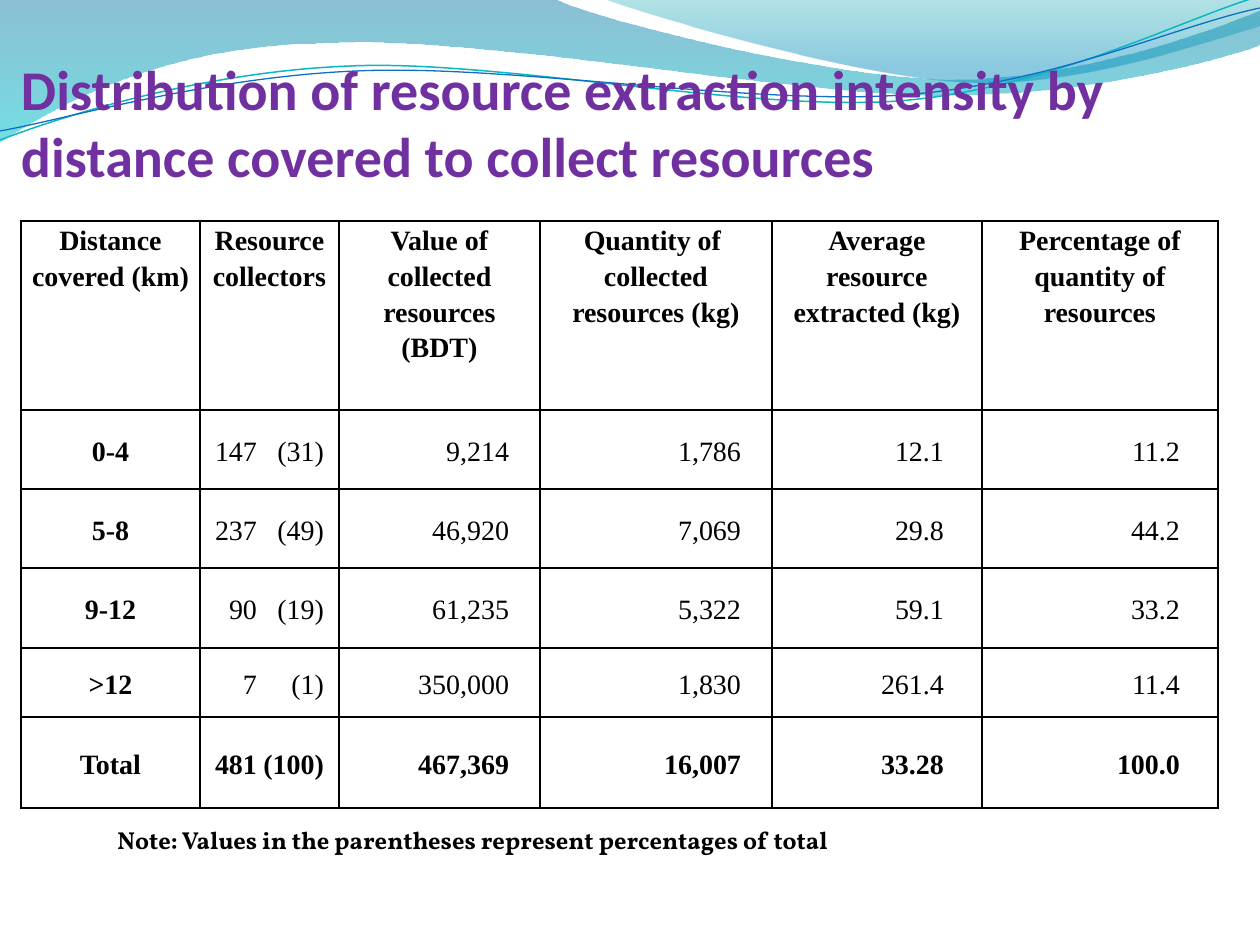
import lxml.etree
import pptx
import pptx.dml.color
import pptx.enum.text
import pptx.oxml.ns
import pptx.util

PX = 914400 / 126  # EMU per px
COLORS = {
    "title": "7030A0", "text": "000000", "border": "000000",
    "deep blue": "0074A1", "cyan": "00C6CF", "teal": "00A1A9", "blue": "008BBF",
    "teal line": "0AB8BF", "blue line": "0F6FC6",
}
FORMATS = {
    "title": {"name": "Calibri", "size": pptx.util.Pt(32), "bold": True},
    "strong": {"name": "Times New Roman", "size": pptx.util.Pt(16), "bold": True},
    "plain": {"name": "Times New Roman", "size": pptx.util.Pt(16), "bold": False},
    "note": {"name": "Vollkorn", "size": pptx.util.Pt(14), "bold": True},
}
ALIGN = pptx.enum.text.PP_ALIGN
ANCHOR = pptx.enum.text.MSO_ANCHOR
qn = pptx.oxml.ns.qn


def add_text(paragraph, text, style, color):
    run = paragraph.add_run()
    run.text = text
    for attribute, value in FORMATS[style].items():
        setattr(run.font, attribute, value)
    run.font.color.rgb = pptx.dml.color.RGBColor.from_string(COLORS[color])


def add_curve(shapes, segments, closed):
    """Two numbers make a straight segment, six a cubic Bezier curve."""
    ends = [(round(segment[-2] * PX), round(segment[-1] * PX)) for segment in segments]
    builder = shapes.build_freeform(*ends[0], scale=1.0)
    builder.add_line_segments(ends[1:], close=closed)
    shape = builder.convert_to_shape()
    shape.shadow.inherit = False
    left, top = (min(values) for values in zip(*ends))
    straight_parts = list(shape._element.iter(qn("a:lnTo")))
    for straight, segment in zip(straight_parts, segments[1:]):
        if len(segment) == 6:
            straight.addprevious(curve := lxml.etree.Element(qn("a:cubicBezTo")))
            for x, y in zip(segment[::2], segment[1::2]):
                lxml.etree.SubElement(curve, qn("a:pt"), x=str(round(x * PX) - left),
                                      y=str(round(y * PX) - top))
            straight.getparent().remove(straight)
    return shape


presentation = pptx.Presentation()
presentation.slide_width = round(1260 * PX)
presentation.slide_height = round(945 * PX)
slide = presentation.slides.add_slide(presentation.slide_layouts[5])
shapes = slide.shapes

# Wave bands: outline, then gradient stops (position, color, opacity)
BANDS = [
    ([(0, 0), (554, -1), (600, 21, 837, 79, 955, 79), (1075, 79, 1207, 33, 1260, 11),
      (1261, 45), (1235, 55, 1096, 96, 940, 95), (784, 95, 481, 35, 324, 43),
      (163, 45, 58, 105, -1, 142)],
     [(0, "deep blue", 45), (1, "cyan", 55)]),
    ([(604, -1), (641, 14, 859, 78, 969, 82), (1079, 87, 1211, 40, 1260, 26), (1260, 0)],
     [(0, "teal", 30), (0.8, "blue", 45)]),
]
for outline, stops in BANDS:
    band = add_curve(shapes, outline, True)
    band.line.fill.background()
    band.fill.gradient()
    band.fill.gradient_angle = 270
    for gradient_stop, (position, color, opacity) in zip(band.fill.gradient_stops, stops):
        gradient_stop.position = position
        gradient_stop.color.rgb = pptx.dml.color.RGBColor.from_string(COLORS[color])
    for element, (position, color, opacity) in zip(
            band._element.spPr.iter(qn("a:srgbClr")), stops):
        lxml.etree.SubElement(element, qn("a:alpha"), val=str(opacity * 1000))

# Wave lines
LINES = [
    ([(0, 140), (60, 117, 199, 72, 349, 66), (496, 59, 747, 112, 898, 101),
      (1050, 89, 1182, 19, 1257, -3)], "teal line", 0.85),
    ([(0, 131), (59, 121, 207, 77, 357, 71), (508, 64, 752, 106, 903, 95),
      (1053, 84, 1175, 26, 1260, 8)], "blue line", 0.75),
]
for outline, color, width in LINES:
    wave = add_curve(shapes, outline, False)
    wave.fill.background()
    wave.line.color.rgb = pptx.dml.color.RGBColor.from_string(COLORS[color])
    wave.line.width = pptx.util.Pt(width)

# Title, in front of the waves
title = shapes.title
shapes._spTree.append(title._element)
title.left, title.top, title.width, title.height = (
    round(length * PX) for length in (21, 31, 1207, 158))
title_format = {
    "margin_left": 0, "margin_top": round(6 * PX), "margin_right": 0, "margin_bottom": 0,
    "vertical_anchor": ANCHOR.BOTTOM, "word_wrap": True,
    "auto_size": pptx.enum.text.MSO_AUTO_SIZE.NONE,
}
for attribute, value in title_format.items():
    setattr(title.text_frame, attribute, value)
paragraph = title.text_frame.paragraphs[0]
paragraph.alignment = ALIGN.LEFT
add_text(paragraph, "Distribution of resource extraction intensity by "
         "distance covered to collect resources", "title", "title")

# Table; collectors and their share sit on two right tabs
COLUMN_WIDTHS = [179, 139, 201, 232, 210, 236]
ROW_HEIGHTS = [189, 79, 79, 80, 69, 91]
RIGHT_MARGINS = [9, 9, 31, 31, 38, 38]
COLLECTOR_TABS = [48, 115]
ROWS = [
    ["Distance covered (km)", "Resource collectors", "Value of collected resources (BDT)",
     "Quantity of  collected resources (kg)", "Average resource extracted (kg)",
     "Percentage of quantity of resources"],
    ["0-4", "\t147\t(31)", "9,214", "1,786", "12.1", "11.2"],
    ["5-8", "\t237\t(49)", "46,920", "7,069", "29.8", "44.2"],
    ["9-12", "\t90\t(19)", "61,235", "5,322", "59.1", "33.2"],
    [">12", "\t7\t(1)", "350,000", "1,830", "261.4", "11.4"],
    ["Total", "\t481\t(100)", "467,369", "16,007", "33.28", "100.0"],
]
table = shapes.add_table(
    len(ROWS), len(COLUMN_WIDTHS), round(21 * PX), round(221 * PX),
    round(sum(COLUMN_WIDTHS) * PX), round(sum(ROW_HEIGHTS) * PX)).table
table.first_row = table.horz_banding = False
for column, width in zip(table.columns, COLUMN_WIDTHS):
    column.width = round(width * PX)
for row, height in zip(table.rows, ROW_HEIGHTS):
    row.height = round(height * PX)

for row_index, texts in enumerate(ROWS):
    for column_index, text in enumerate(texts):
        cell = table.cell(row_index, column_index)
        header = row_index == 0
        centered = header or column_index == 0
        cell_format = {
            "margin_left": round(9 * PX), "margin_top": 0, "margin_bottom": 0,
            "margin_right": round((9 if header else RIGHT_MARGINS[column_index]) * PX),
            "vertical_anchor": ANCHOR.TOP if header else ANCHOR.MIDDLE,
        }
        for attribute, value in cell_format.items():
            setattr(cell, attribute, value)
        properties = cell._tc.get_or_add_tcPr()
        for side in ("a:lnL", "a:lnR", "a:lnT", "a:lnB"):
            border = lxml.etree.SubElement(properties, qn(side), w="12700")
            solid = lxml.etree.SubElement(border, qn("a:solidFill"))
            lxml.etree.SubElement(solid, qn("a:srgbClr"), val=COLORS["border"])
        cell.fill.background()

        paragraph = cell.text_frame.paragraphs[0]
        paragraph.line_spacing = 1.15
        paragraph.alignment = ALIGN.CENTER if centered else ALIGN.RIGHT
        if column_index == 1 and not header:
            paragraph.alignment = ALIGN.LEFT
            tabs = lxml.etree.SubElement(paragraph._p.get_or_add_pPr(), qn("a:tabLst"))
            for position in COLLECTOR_TABS:
                lxml.etree.SubElement(
                    tabs, qn("a:tab"), pos=str(round(position * PX)), algn="r")
        strong = centered or row_index == len(ROWS) - 1
        add_text(paragraph, text, "strong" if strong else "plain", "text")

# Note
note = shapes.add_textbox(*(round(length * PX) for length in (105, 819, 872, 43)))
note.text_frame.word_wrap = True
add_text(note.text_frame.paragraphs[0],
         "Note: Values in the parentheses represent percentages of total", "note", "text")

presentation.save("out.pptx")
